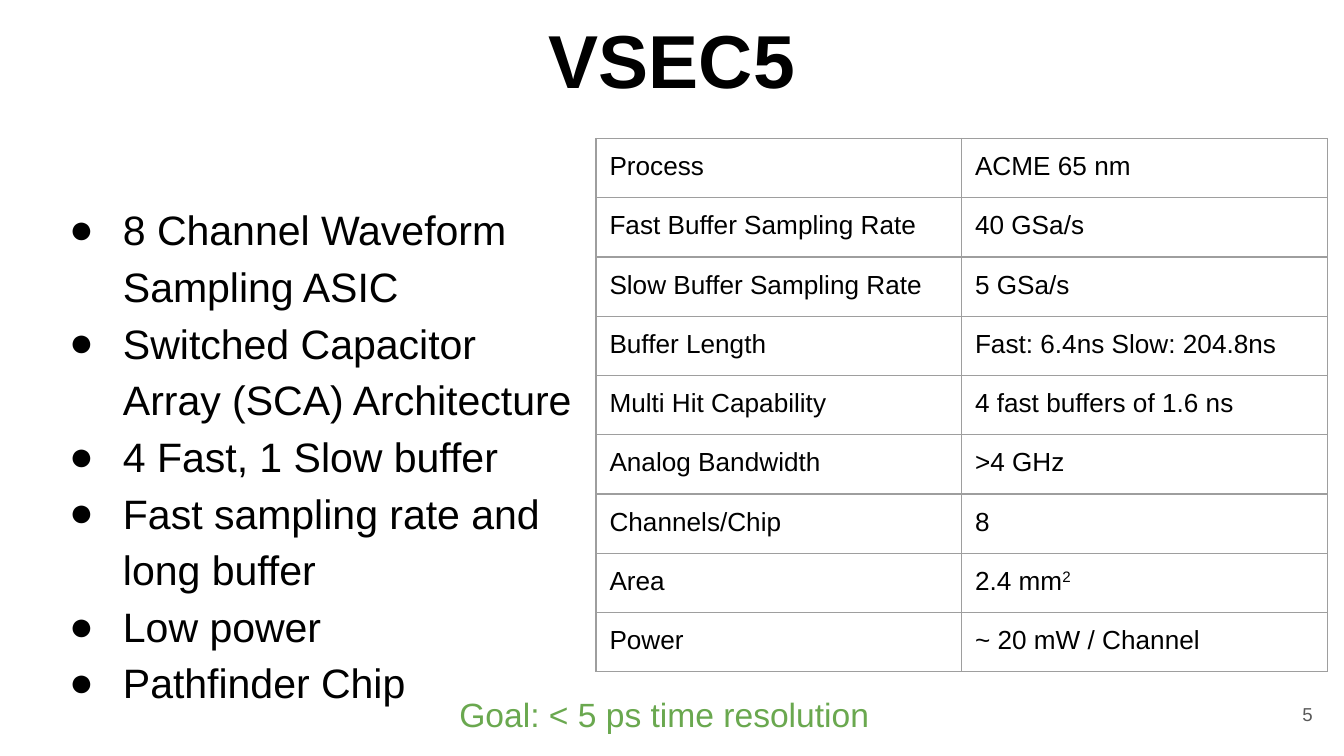
"""Build the chip overview slide with a feature list and a specification table."""
from lxml import etree
from pptx import Presentation
from pptx.dml.color import RGBColor
from pptx.enum.text import MSO_ANCHOR, MSO_AUTO_SIZE, PP_ALIGN
from pptx.oxml.ns import qn
from pptx.util import Pt

PX = 4572
MARGIN = 20 * PX
TOP, MIDDLE = MSO_ANCHOR.TOP, MSO_ANCHOR.MIDDLE
LEFT, CENTER, RIGHT = PP_ALIGN.LEFT, PP_ALIGN.CENTER, PP_ALIGN.RIGHT
NO_FIT = MSO_AUTO_SIZE.NONE
FEATURES = [
    "8 Channel Waveform Sampling ASIC",
    "Switched Capacitor Array (SCA) Architecture",
    "4 Fast, 1 Slow buffer",
    "Fast sampling rate and long buffer",
    "Low power",
    "Pathfinder Chip",
]
SPECIFICATIONS = [
    ("Process", "ACME 65 nm"),
    ("Fast Buffer Sampling Rate", "40 GSa/s"),
    ("Slow Buffer Sampling Rate", "5 GSa/s"),
    ("Buffer Length", "Fast: 6.4ns Slow: 204.8ns"),
    ("Multi Hit Capability", "4 fast buffers of 1.6 ns"),
    ("Analog Bandwidth", ">4 GHz"),
    ("Channels/Chip", "8"),
    ("Area", "2.4 mm"),
    ("Power", "~ 20 mW / Channel"),
]


def color(hex_value):
    return RGBColor.from_string(hex_value)


def write(paragraph, text, size, hex_value="000000", bold=False, align=LEFT):
    paragraph.alignment = align
    run = paragraph.add_run()
    run.text = text
    run.font.color.rgb = color(hex_value)
    for name, value in {"name": "Arial", "size": Pt(size), "bold": bold}.items():
        setattr(run.font, name, value)
    return run


presentation = Presentation()
presentation.slide_width = 2000 * PX
presentation.slide_height = 1125 * PX
slide = presentation.slides.add_slide(presentation.slide_layouts[1])
title = slide.shapes.title
body = slide.placeholders[1]
goal = slide.shapes.add_textbox(0, 0, PX, PX)
page_number = slide.shapes.add_textbox(0, 0, PX, PX)

layout = [
    (title, (470, 0, 1060, 140), 20, TOP),
    (body, (63, 166, 824, 872), 128, TOP),
    (goal, (664, 1013, 672, 100), 20, TOP),
    (page_number, (1853, 1020, 120, 86), 20, MIDDLE),
]
for shape, box, top_margin, anchor in layout:
    for name, length in zip(("left", "top", "width", "height"), box):
        setattr(shape, name, length * PX)
    frame_format = {
        "word_wrap": True,
        "auto_size": NO_FIT,
        "vertical_anchor": anchor,
        "margin_left": MARGIN,
        "margin_right": MARGIN,
        "margin_top": top_margin * PX,
        "margin_bottom": MARGIN,
    }
    for name, value in frame_format.items():
        setattr(shape.text_frame, name, value)

write(title.text_frame.paragraphs[0], "VSEC5", 40.2, bold=True, align=CENTER)
write(goal.text_frame.paragraphs[0], "Goal: < 5 ps time resolution", 18, "6AA84F")
write(page_number.text_frame.paragraphs[0], "5", 10, "595959", align=RIGHT)

for index, feature in enumerate(FEATURES):
    frame = body.text_frame
    paragraph = frame.add_paragraph() if index else frame.paragraphs[0]
    write(paragraph, feature, 22)
    spacing = {"line_spacing": 1.15, "space_before": Pt(0), "space_after": Pt(0)}
    for name, value in spacing.items():
        setattr(paragraph, name, value)
    properties = paragraph._p.get_or_add_pPr()
    properties.set("marL", str(100 * PX))
    properties.set("indent", str(-80 * PX))
    bullet_color = etree.SubElement(properties, qn("a:buClr"))
    etree.SubElement(bullet_color, qn("a:srgbClr"), val="000000")
    etree.SubElement(properties, qn("a:buFont"), typeface="Arial")
    etree.SubElement(properties, qn("a:buChar"), char="●")

table = slide.shapes.add_table(
    len(SPECIFICATIONS), 2, 887 * PX, 206 * PX, 1088 * PX, 794 * PX
).table
table.first_row = False
table.horz_banding = False
for column in table.columns:
    column.width = 544 * PX
for row, values in zip(table.rows, SPECIFICATIONS):
    for cell, value in zip(row.cells, values):
        for side in ("left", "right", "top", "bottom"):
            setattr(cell, f"margin_{side}", MARGIN)
        cell_properties = cell._tc.get_or_add_tcPr()
        for tag in ("a:lnL", "a:lnR", "a:lnT", "a:lnB"):
            border = etree.SubElement(cell_properties, qn(tag), w=str(Pt(0.75)))
            border_fill = etree.SubElement(border, qn("a:solidFill"))
            etree.SubElement(border_fill, qn("a:srgbClr"), val="9E9E9E")
        cell.fill.background()
        write(cell.text_frame.paragraphs[0], value, 14)

area_cell = table.cell(7, 1)
exponent = write(area_cell.text_frame.paragraphs[0], "2", 14)
exponent._r.get_or_add_rPr().set("baseline", "30000")

presentation.save("out.pptx")
